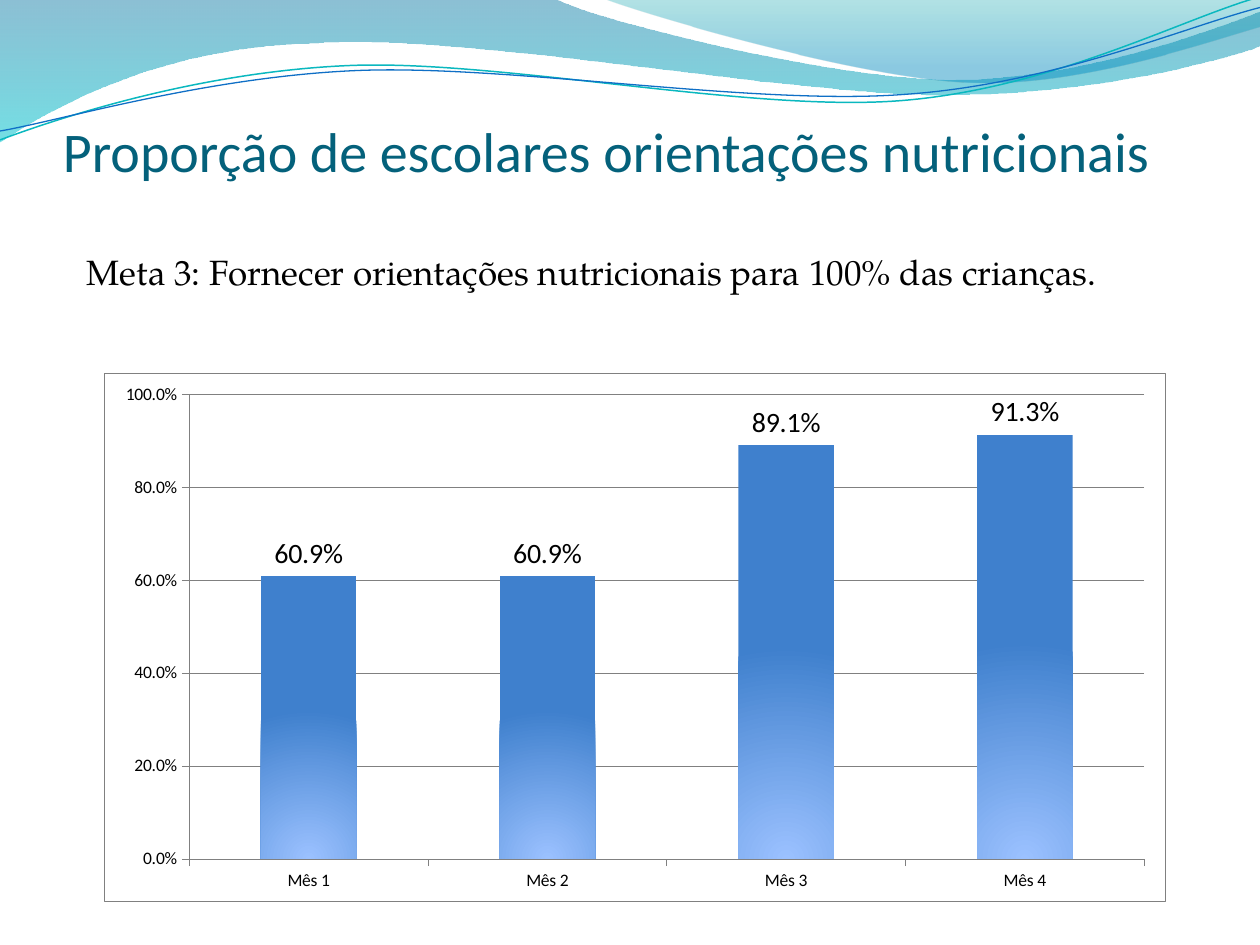
import math

import lxml.etree
import pptx
import pptx.chart.data
import pptx.dml.color
import pptx.enum.chart
import pptx.enum.text
import pptx.oxml
import pptx.oxml.ns
import pptx.util

TITLE = "Proporção de escolares orientações nutricionais"
GOAL = "Meta 3: Fornecer orientações nutricionais para 100% das crianças."
MONTHS = ["Mês 1", "Mês 2", "Mês 3", "Mês 4"]
RATES = [0.609, 0.609, 0.891, 0.913]
GREY = "808080"
INCH = 2.54
TILT = 2.7

BANDS = [
    ([(0, 0), (4.4, -0.01), (4.76, 0.17, 6.64, 0.63, 7.58, 0.63),
      (8.53, 0.63, 9.58, 0.26, 10, 0.09), (10.01, 0.36),
      (9.83, 0.44, 8.7, 0.76, 7.46, 0.75), (6.22, 0.75, 3.82, 0.28, 2.57, 0.34),
      (1.29, 0.36, 0.46, 0.83, -0.01, 1.13), (0, 0)],
     [(0, "0074A1", 45), (100, "00C6CF", 55)]),
    ([(4.79, -0.01), (5.09, 0.11, 6.82, 0.62, 7.69, 0.65),
      (8.56, 0.69, 9.61, 0.32, 10, 0.21), (10, 0), (4.79, -0.01)],
     [(0, "00A1A9", 30), (80, "008BBF", 45)]),
]
WAVES = [
    ([(0, 1.11), (0.48, 0.93, 1.58, 0.57, 2.77, 0.52),
      (3.95, 0.47, 5.93, 0.89, 7.13, 0.8), (8.33, 0.71, 9.38, 0.15, 9.98, -0.02)],
     "0AB8BF", 0.85, (4.99, 0.57)),
    ([(0, 1.04), (0.47, 0.96, 1.64, 0.61, 2.83, 0.56),
      (4.03, 0.51, 5.97, 0.84, 7.17, 0.75), (8.36, 0.67, 9.41, 0.21, 10, 0.06)],
     "0F6FC6", 0.75, (5, 0.58)),
]
TEXTS = [
    (TITLE, (1.27, 0.53, 23.42, 3.18), 32, "Calibri", "04617B", "BOTTOM", 0),
    (GOAL, (1.5, 4.93, 21.59, 1.12), 20, "TeX Gyre Pagella", "000000", "TOP", 0.25),
]
FRAME = (2.1, 7.52, 21.4, 10.65)
INNER = {"x": 0.08, "y": 0.04, "w": 0.9, "h": 0.88}


def rgb(code):
    return pptx.dml.color.RGBColor.from_string(code)


def box(sizes):
    return [pptx.util.Cm(size) for size in sizes]


def pairs(step):
    return list(zip(step[::2], step[1::2]))


def turn(step, mid):
    """Rotate the points of a step clockwise about mid."""
    cos, sin = math.cos(math.radians(TILT)), math.sin(math.radians(TILT))
    flat = []
    for x, y in pairs(step):
        dx, dy = x - mid[0], y - mid[1]
        flat += [mid[0] + dx * cos - dy * sin, mid[1] + dx * sin + dy * cos]
    return flat


def draw(shapes, steps, close):
    steps = [[round(size * INCH * 1000) for size in step] for step in steps]
    ends = [step[-2:] for step in steps]
    pen = shapes.build_freeform(*ends[0], scale=pptx.util.Cm(0.001))
    pen.add_line_segments(ends[1:], close=close)
    shape = pen.convert_to_shape()
    shape.shadow.inherit = False
    left, top = (min(axis) for axis in zip(*ends))
    lines = list(shape._element.iter(pptx.oxml.ns.qn("a:lnTo")))
    for line, step in zip(lines, steps[1:]):
        if len(step) > 2:
            spots = "".join(f'<a:pt x="{x - left}" y="{y - top}"/>' for x, y in pairs(step))
            line.getparent().replace(line, pptx.oxml.parse_xml(
                f'<a:cubicBezTo {pptx.oxml.ns.nsdecls("a")}>{spots}</a:cubicBezTo>'))
    return shape


def blend(fill, stops):
    fill.gradient()
    fill.gradient_angle = 270
    for stop, (place, code, alpha) in zip(fill.gradient_stops, stops):
        stop.position = place / 100
        stop.color.rgb = rgb(code)
        if alpha < 100:
            hue = stop._gs.find(pptx.oxml.ns.qn("a:srgbClr"))
            node = lxml.etree.SubElement(hue, pptx.oxml.ns.qn("a:alpha"))
            node.set("val", str(alpha * 1000))


def glow(bars):
    blend(bars.format.fill, [(0, "9BC1FF", 100), (100, "3F80CD", 100)])
    lin = next(bars._element.iter(pptx.oxml.ns.qn("a:lin")))
    lin.getparent().replace(lin, pptx.oxml.parse_xml(
        f'<a:path {pptx.oxml.ns.nsdecls("a")} path="circle">'
        '<a:fillToRect l="50000" t="100000" r="50000" b="0"/></a:path>'))


def panel(line):
    return pptx.oxml.parse_xml(
        f'<c:spPr {pptx.oxml.ns.nsdecls("c", "a")}><a:solidFill><a:srgbClr val="FFFFFF"/>'
        f'</a:solidFill><a:ln w="3175">{line}</a:ln></c:spPr>')


def style(font, size, code="000000", name="Calibri"):
    font.size = pptx.util.Pt(size)
    font.name = name
    font.color.rgb = rgb(code)


def rule(line, code=GREY, width=0.25):
    line.color.rgb = rgb(code)
    line.width = pptx.util.Pt(width)


def write(slide, text, place, size, name, code, anchor, inset):
    frame = slide.shapes.add_textbox(*box(place)).text_frame
    frame.word_wrap = True
    frame.vertical_anchor = getattr(pptx.enum.text.MSO_ANCHOR, anchor)
    frame.margin_left = frame.margin_right = pptx.util.Cm(inset)
    if anchor == "BOTTOM":
        frame.margin_bottom = 0
    para = frame.paragraphs[0]
    para.text = text
    style(para.font, size, code, name)


def plot(slide):
    kinds = pptx.enum.chart
    data = pptx.chart.data.CategoryChartData(number_format="0.0%")
    data.categories = MONTHS
    data.add_series("Series 1", RATES)
    chart = slide.shapes.add_chart(
        kinds.XL_CHART_TYPE.COLUMN_CLUSTERED, *box(FRAME), data).chart
    chart.has_legend = chart.has_title = False
    style(chart.font, 10)
    for axis in (chart.category_axis, chart.value_axis):
        axis.major_tick_mark = kinds.XL_TICK_MARK.OUTSIDE
        style(axis.tick_labels.font, 10)
        rule(axis.format.line)
    axis.minimum_scale, axis.maximum_scale, axis.major_unit = 0, 1, 0.2
    axis.tick_labels.number_format = "0.0%"
    axis.tick_labels.number_format_is_linked = False
    rule(axis.major_gridlines.format.line)
    bars = chart.plots[0]
    bars.gap_width, bars.vary_by_categories = 150, False
    glow(bars.series[0])
    labels = bars.series[0].data_labels
    labels.show_value = True
    labels.number_format, labels.number_format_is_linked = "0.0%", False
    labels.position = kinds.XL_LABEL_POSITION.OUTSIDE_END
    style(labels.font, 16)
    root = chart._chartSpace.chart
    area = root.plotArea
    for old in area.findall(pptx.oxml.ns.qn("c:layout")):
        area.remove(old)
    sizes = "".join(f'<c:{key} val="{size}"/>' for key, size in INNER.items())
    area.insert(0, pptx.oxml.parse_xml(
        f'<c:layout {pptx.oxml.ns.nsdecls("c")}><c:manualLayout>'
        '<c:layoutTarget val="inner"/><c:xMode val="edge"/><c:yMode val="edge"/>'
        f'{sizes}</c:manualLayout></c:layout>'))
    area.append(panel("<a:noFill/>"))
    root.addnext(panel(f'<a:solidFill><a:srgbClr val="{GREY}"/></a:solidFill>'))


def main():
    deck = pptx.Presentation()
    deck.slide_width, deck.slide_height = box((25.4, 19.05))
    slide = deck.slides.add_slide(deck.slide_layouts[6])
    for steps, stops in BANDS:
        band = draw(slide.shapes, steps, True)
        blend(band.fill, stops)
        band.line.fill.background()
    group = slide.shapes.add_group_shape()
    for steps, code, width, mid in WAVES:
        wave = draw(group.shapes, [turn(step, mid) for step in steps], False)
        wave.rotation = 360 - TILT
        wave.fill.background()
        rule(wave.line, code, width)
    write(slide, *TEXTS[0])
    plot(slide)
    write(slide, *TEXTS[1])
    deck.save("out.pptx")


if __name__ == "__main__":
    main()
